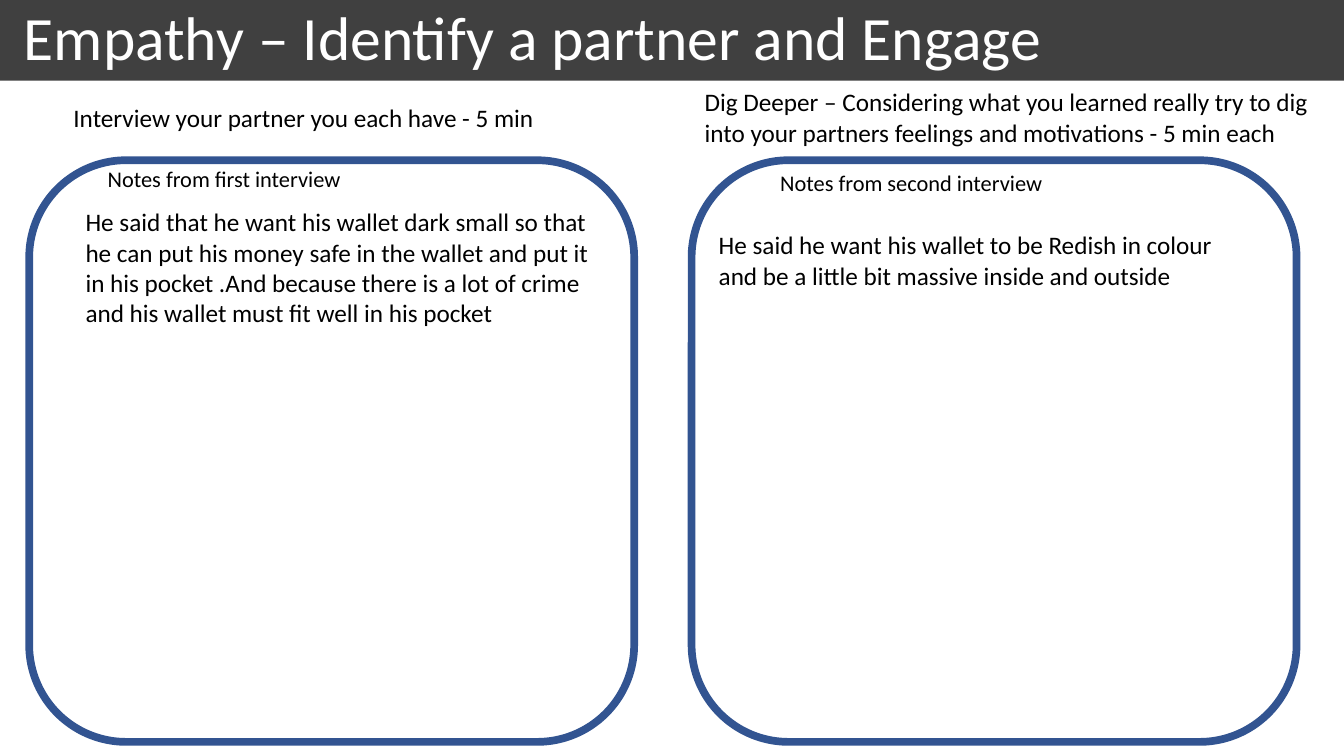
"""Build the empathy interview slide with two note frames."""
from dataclasses import dataclass

from pptx import Presentation
from pptx.dml.color import RGBColor as Rgb
from pptx.enum.shapes import MSO_SHAPE as Kind
from pptx.enum.text import MSO_ANCHOR as Anchor, MSO_AUTO_SIZE as Fit, PP_ALIGN as Align
from pptx.shapes.autoshape import Shape
from pptx.slide import Slide
from pptx.util import Inches, Pt

Box = tuple[float, float, float, float]
BAND: Box = (0, 0, 13.33, 0.8)


@dataclass(frozen=True)
class Label:
    text: str
    box: Box
    size: int = 18
    color: str = "000000"
    anchor: Anchor = Anchor.TOP
    fit: Fit = Fit.SHAPE_TO_FIT_TEXT
    space: float = 1.0


@dataclass(frozen=True)
class Panel:
    kind: Kind
    box: Box
    fill: str = ""
    line: str = ""
    width: float = 5.5


PANELS = [Panel(Kind.RECTANGLE, BAND, fill="404040")] + [
    Panel(Kind.ROUNDED_RECTANGLE, (left, 1.59, 6, 5.77), line="325491")
    for left in (0.29, 6.86)
]

LABELS = [
    Label(" Empathy – Identify a partner and Engage", BAND, 44, "FFFFFF",
          Anchor.MIDDLE, Fit.NONE, 0.9),
    Label("Interview your partner you each have - 5 min", (0.63, 0.97, 5.81, 0.4)),
    Label("Dig Deeper – Considering what you learned really try to dig into "
          "your partners feelings and motivations - 5 min each",
          (6.89, 0.81, 6.28, 0.71)),
    Label("Notes from first interview", (0.97, 1.59, 3.38, 0.37), 16),
    Label("Notes from second interview", (7.64, 1.63, 3.38, 0.37), 16),
    Label("He said that he want his wallet dark small so that he can put his "
          "money safe in the wallet and put it in his pocket .And because there "
          "is a lot of crime and his wallet must fit well in his pocket",
          (0.75, 2, 5.37, 1.31)),
    Label("He said he want his wallet to be Redish in colour and be a little bit "
          "massive inside and outside", (7.03, 2.23, 5.43, 0.71)),
]


def paint(code: str) -> Rgb:
    """Turn a hex string into a colour."""
    return Rgb.from_string(code)


def assign(target: object, values: dict[str, object]) -> None:
    """Set each named value on the target."""
    for name, value in values.items():
        setattr(target, name, value)


def draw_panel(slide: Slide, panel: Panel) -> Shape:
    """Draw a filled or outlined panel."""
    shape = slide.shapes.add_shape(panel.kind, *map(Inches, panel.box))
    shape.shadow.inherit = False
    if panel.fill:
        shape.fill.solid()
        shape.fill.fore_color.rgb = paint(panel.fill)
    else:
        shape.fill.background()
    if panel.line:
        shape.line.color.rgb = paint(panel.line)
        shape.line.width = Pt(panel.width)
    else:
        shape.line.fill.background()
    return shape


def draw_label(slide: Slide, label: Label) -> Shape:
    """Draw a wrapped text box."""
    shape = slide.shapes.add_textbox(*map(Inches, label.box))
    frame = shape.text_frame
    assign(frame, {"word_wrap": True, "auto_size": label.fit,
                   "vertical_anchor": label.anchor})
    para = frame.paragraphs[0]
    assign(para, {"alignment": Align.LEFT, "line_spacing": label.space})
    run = para.add_run()
    run.text = label.text
    assign(run.font, {"name": "Calibri", "size": Pt(label.size)})
    run.font.color.rgb = paint(label.color)
    return shape


def main() -> None:
    """Create the deck and save it."""
    deck = Presentation()
    assign(deck, {"slide_width": Inches(13.33), "slide_height": Inches(7.5)})
    slide = deck.slides.add_slide(deck.slide_layouts[6])
    for panel in PANELS:
        draw_panel(slide, panel)
    for label in LABELS:
        draw_label(slide, label)
    deck.save("out.pptx")


if __name__ == "__main__":
    main()
